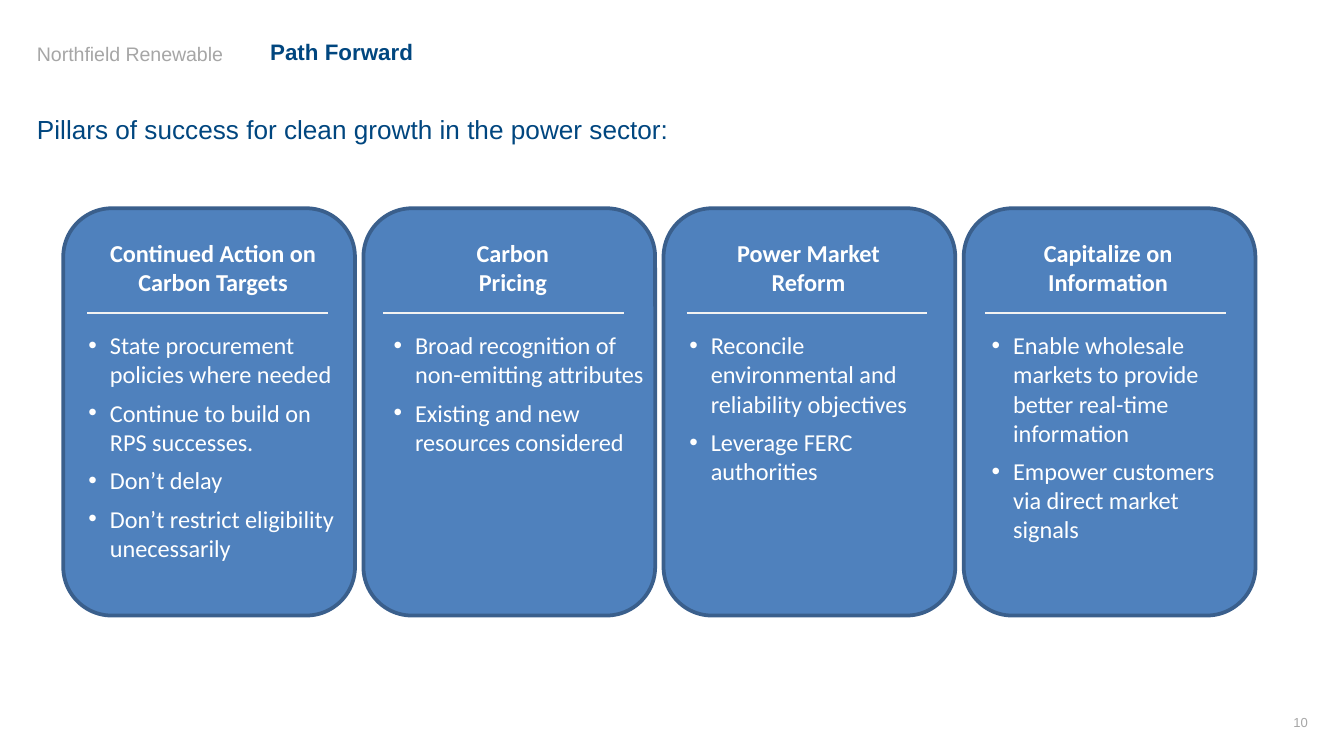
from lxml import etree
from pptx import Presentation
from pptx.dml.color import RGBColor
from pptx.enum import shapes, text
from pptx.oxml import ns
from pptx.util import Pt

COLORS = {"navy": "00467F", "gray": "A6A6A6", "card": "4F81BD",
          "border": "3A5F8C", "white": "FFFFFF", "rule": "F2F2F2"}


def prepare_frame(shape, left, top, width, height, insets):
    shape.left, shape.top, shape.width, shape.height = map(Pt, (left, top, width, height))
    frame = shape.text_frame
    frame.word_wrap = True
    frame.auto_size = text.MSO_AUTO_SIZE.NONE
    frame.vertical_anchor = text.MSO_ANCHOR.TOP
    frame.margin_left, frame.margin_top, frame.margin_right, frame.margin_bottom = map(Pt, insets)
    return frame


def write_line(paragraph, words, size, color, font="Arial", bold=False,
               alignment=text.PP_ALIGN.LEFT, bullet=None):
    properties = paragraph._p.get_or_add_pPr()
    indent = Pt(11.5) if bullet else 0
    properties.set("marL", str(indent))
    properties.set("indent", str(-indent))
    if bullet:
        etree.SubElement(properties, ns.qn("a:buFont")).set("typeface", "Arial")
        etree.SubElement(properties, ns.qn("a:buChar")).set("char", bullet)
    else:
        etree.SubElement(properties, ns.qn("a:buNone"))
    paragraph.alignment = alignment
    paragraph.space_before = Pt(0)
    run = paragraph.add_run()
    run.text = words
    run.font.name = font
    run.font.size = Pt(size)
    run.font.bold = bold
    run.font.color.rgb = RGBColor.from_string(COLORS[color])


presentation = Presentation()
presentation.slide_width = Pt(720)
presentation.slide_height = Pt(405)
slide = presentation.slides.add_slide(presentation.slide_layouts[1])

no_insets = (0, 0, 0, 0)
box_insets = (7.2, 3.6, 7.2, 3.6)

company = slide.shapes.add_textbox(0, 0, 0, 0)
frame = prepare_frame(company, 19.8, 22.3, 278, 11.5, no_insets)
write_line(frame.paragraphs[0], "Northfield Renewable", 10.5, "gray")

page_number = slide.shapes.add_textbox(0, 0, 0, 0)
frame = prepare_frame(page_number, 669.6, 379.4, 31, 15.8, (7.2, 3.6, 0, 3.6))
write_line(frame.paragraphs[0], "10", 7, "gray", alignment=text.PP_ALIGN.RIGHT)

frame = prepare_frame(slide.shapes.title, 144.7, 20.2, 340.6, 17.3, no_insets)
write_line(frame.paragraphs[0], "Path Forward", 12, "navy", bold=True)

frame = prepare_frame(slide.placeholders[1], 19.8, 60.5, 680.4, 45.4, no_insets)
write_line(frame.paragraphs[0], "Pillars of success for clean growth in the power sector:",
           14, "navy")

pillars = [
    (43.9, 40.3, 46.8, ["Continued Action on Carbon Targets"],
     ["State procurement policies where needed", "Continue to build on RPS successes.",
      "Don’t delay", "Don’t restrict eligibility unecessarily"]),
    (204.5, 203.8, 205.2, ["Carbon", "Pricing"],
     ["Broad recognition of non-emitting attributes",
      "Existing and new resources considered"]),
    (362.9, 362.2, 367.9, ["Power Market", "Reform"],
     ["Reconcile environmental and reliability objectives", "Leverage FERC authorities"]),
    (523.4, 524.2, 527.8, ["Capitalize on Information"],
     ["Enable wholesale markets to provide better real-time information",
      "Empower customers via direct market signals"]),
]

for index, (heading_left, list_left, rule_left, heading, items) in enumerate(pillars):
    card = slide.shapes.add_shape(shapes.MSO_SHAPE.ROUNDED_RECTANGLE,
                                  Pt(33.9 + index * 160.8), Pt(111.6), Pt(156.3), Pt(218.2))
    card.shadow.inherit = False
    card.fill.solid()
    card.fill.fore_color.rgb = RGBColor.from_string(COLORS["card"])
    card.line.color.rgb = RGBColor.from_string(COLORS["border"])
    card.line.width = Pt(2)

    heading_box = slide.shapes.add_textbox(0, 0, 0, 0)
    frame = prepare_frame(heading_box, heading_left, 123.9, 140.4, 38.9, box_insets)
    for number, words in enumerate(heading):
        paragraph = frame.add_paragraph() if number else frame.paragraphs[0]
        write_line(paragraph, words, 13, "white", "Calibri", True, text.PP_ALIGN.CENTER)

    list_box = slide.shapes.add_textbox(0, 0, 0, 0)
    frame = prepare_frame(list_box, list_left, 173.5, 149.1, 132, box_insets)
    for number, words in enumerate(items):
        paragraph = frame.add_paragraph() if number else frame.paragraphs[0]
        write_line(paragraph, words, 13, "white", "Calibri", bullet="•")
        if number:
            paragraph.space_before = Pt(4.9)

    rule = slide.shapes.add_connector(shapes.MSO_CONNECTOR.STRAIGHT, Pt(rule_left), Pt(167.8),
                                      Pt(rule_left + 128.9), Pt(167.8))
    rule.line.color.rgb = RGBColor.from_string(COLORS["rule"])
    rule.line.width = Pt(0.75)
    etree.SubElement(rule._element.spPr, ns.qn("a:effectLst"))

presentation.save("out.pptx")
